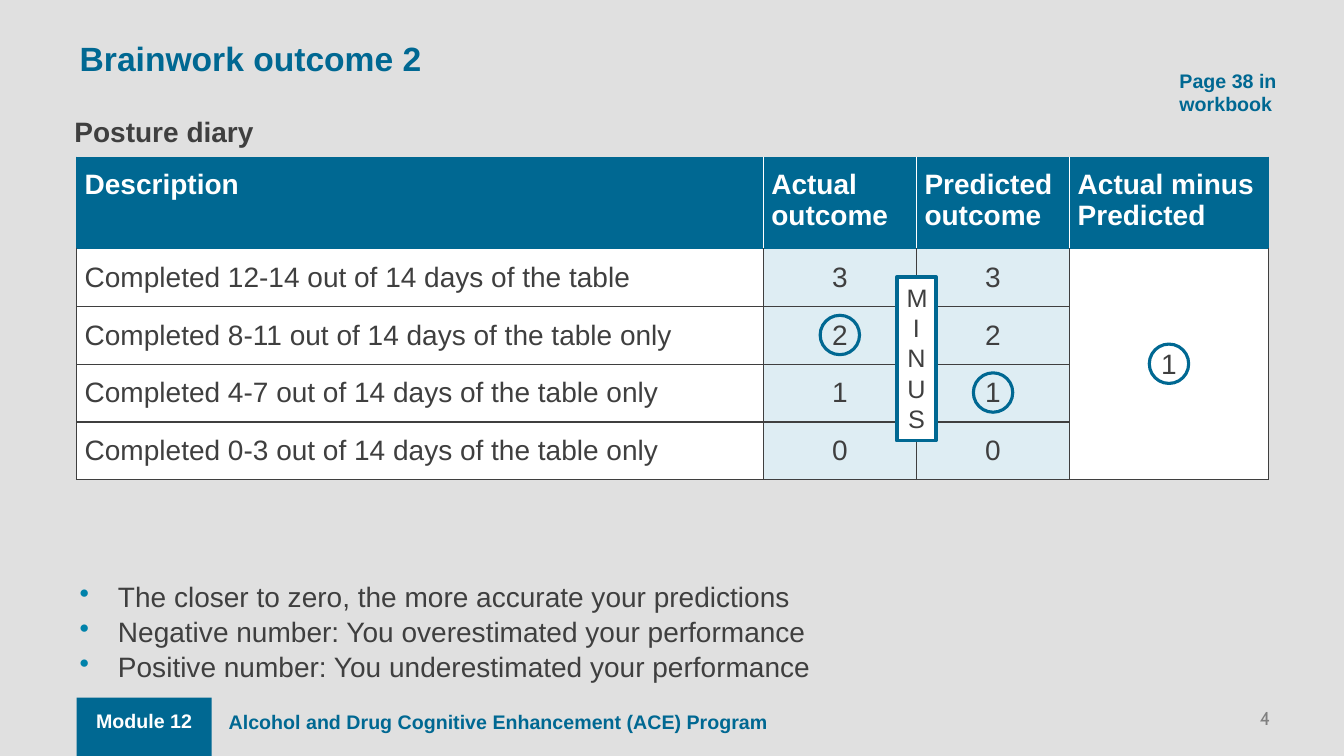
import pptx
import pptx.util
import pptx.dml.color
import pptx.enum.shapes
import pptx.enum.text
from lxml import etree
from pptx.oxml.ns import qn

RGB = pptx.dml.color.RGBColor
Pt = pptx.util.Pt
Inches = pptx.util.Inches
ALIGN = pptx.enum.text.PP_ALIGN
ANCHOR = pptx.enum.text.MSO_ANCHOR
KIND = pptx.enum.shapes.MSO_SHAPE

TEAL = RGB(0x00, 0x68, 0x92)
INK = RGB(0x3F, 0x3F, 0x3F)
WHITE = RGB(0xFF, 0xFF, 0xFF)
PALE = RGB(0xDE, 0xED, 0xF3)
BACK = RGB(0xE0, 0xE0, 0xE0)
GREY = RGB(0x80, 0x80, 0x80)
BULLET = RGB(0x00, 0x82, 0xAA)

WIDE, HIGH = Inches(13.33), Inches(7.5)

# Table grid, in percent of the slide's width and height
LEFT, TOP = 5.7, 20.8
COLS = [51.09, 11.4, 11.4, 14.78]
ROWS = [12.1] + [7.61] * 4
HEAD = ["Description", "Actual outcome", "Predicted outcome",
        "Actual minus Predicted"]
DAYS = ["12-14 out of 14 days of the table",
        "8-11 out of 14 days of the table only",
        "4-7 out of 14 days of the table only",
        "0-3 out of 14 days of the table only"]
HINTS = ["The closer to zero, the more accurate your predictions",
         "Negative number: You overestimated your performance",
         "Positive number: You underestimated your performance"]


def across(share):
    return round(WIDE * share / 100)


def down(share):
    return round(HIGH * share / 100)


def place(x, y, w, h):
    """Turn percent shares of the slide into lengths."""
    return across(x), down(y), across(w), down(h)


def col_x(col):
    """Left edge of a table column; fractions fall inside it."""
    whole = int(col)
    return across(LEFT + sum(COLS[:whole]) + (col - whole) * COLS[whole])


def row_y(row):
    """Top edge of a table row; fractions fall inside it."""
    whole = int(row)
    return down(TOP + sum(ROWS[:whole]) + (row - whole) * ROWS[whole])


def write(para, text, size, color, bold=False, align=None, font="Arial"):
    if align is not None:
        para.alignment = align
    run = para.add_run()
    run.text = text
    run.font.name, run.font.size, run.font.bold = font, Pt(size), bold
    run.font.color.rgb = color


def add_box(slide, spot, inset=True):
    frame = slide.shapes.add_textbox(*place(*spot)).text_frame
    frame.word_wrap = True
    if not inset:
        frame.margin_left = frame.margin_right = 0
        frame.margin_top = frame.margin_bottom = 0
    return frame


def add_shape(slide, kind, spot, fill=None, line=None):
    shape = slide.shapes.add_shape(kind, *spot)
    shape.shadow.inherit = False
    if fill is None:
        shape.fill.background()
    else:
        shape.fill.solid()
        shape.fill.fore_color.rgb = fill
    if line is None:
        shape.line.fill.background()
    else:
        shape.line.color.rgb, shape.line.width = TEAL, Pt(line)
    return shape


def add_ring(slide, col, row):
    """Circle the value at this point of the table grid."""
    size = across(2.93)
    spot = col_x(col) - size // 2, row_y(row) - size // 2, size, size
    add_shape(slide, KIND.OVAL, spot, line=2.25)


def add_bullet(para):
    props = para._p.get_or_add_pPr()
    props.set("marL", str(Inches(0.38)))
    props.set("indent", str(-Inches(0.38)))
    color = etree.SubElement(props, qn("a:buClr"))
    etree.SubElement(color, qn("a:srgbClr"), val=str(BULLET))
    etree.SubElement(props, qn("a:buChar"), char="•")


def set_edges(cell, left, right, top, bottom):
    props = cell._tc.get_or_add_tcPr()
    edges = zip(("lnL", "lnR", "lnT", "lnB"), (left, right, top, bottom))
    for spot, (name, color) in enumerate(edges):
        line = etree.Element(qn("a:" + name), w=str(Pt(1)))
        fill = etree.SubElement(line, qn("a:solidFill"))
        etree.SubElement(fill, qn("a:srgbClr"), val=str(color))
        props.insert(spot, line)


def fill_cell(cell, row, col, text):
    first, last = col == 0, col == len(COLS) - 1
    cell.margin_left = cell.margin_right = Inches(0.08)
    cell.margin_top = cell.margin_bottom = Inches(0.12)
    cell.fill.solid()
    para = cell.text_frame.paragraphs[0]
    if row == 0:
        cell.fill.fore_color.rgb = TEAL
        write(para, text, 20, WHITE, True)
        set_edges(cell, TEAL if first else WHITE,
                  TEAL if last else WHITE, TEAL, TEAL)
        return
    cell.fill.fore_color.rgb = WHITE if first or last else PALE
    cell.vertical_anchor = ANCHOR.MIDDLE
    if text:
        write(para, text, 20, INK, align=None if first else ALIGN.CENTER)
    set_edges(cell, INK, INK, TEAL if row == 1 else INK, INK)


def add_diary(slide):
    spot = place(LEFT, TOP, sum(COLS), sum(ROWS))
    table = slide.shapes.add_table(len(ROWS), len(COLS), *spot).table
    for col, share in enumerate(COLS):
        table.columns[col].width = across(share)
    for row, share in enumerate(ROWS):
        table.rows[row].height = down(share)
    lines = [HEAD]
    for rank, days in enumerate(DAYS):
        score = str(3 - rank)
        lines.append(["Completed " + days, score, score,
                      "1" if rank == 0 else ""])
    for row, line in enumerate(lines):
        for col, text in enumerate(line):
            fill_cell(table.cell(row, col), row, col, text)
    table.cell(1, 3).merge(table.cell(4, 3))


def add_minus(slide):
    """Upright label on the edge between the two outcome columns."""
    wide, high = across(2.93), down(21.6)
    spot = col_x(2) - wide // 2, down(36.67), wide, high
    frame = add_shape(slide, KIND.RECTANGLE, spot, WHITE, 2.75).text_frame
    frame.word_wrap = True
    frame.vertical_anchor = ANCHOR.TOP
    write(frame.paragraphs[0], "MINUS", 18, INK, align=ALIGN.CENTER)


def add_footer(slide):
    add_shape(slide, KIND.RECTANGLE, place(LEFT, 92.27, 10.05, 7.73), TEAL)
    name = add_box(slide, (16.28, 93.2, 83.57, 6.27))
    write(name.paragraphs[0],
          "Alcohol and Drug Cognitive Enhancement (ACE) Program",
          14, TEAL, True)
    part = add_box(slide, (LEFT, 93.07, 10.05, 4.53))
    write(part.paragraphs[0], "Module 12", 14, WHITE, True, ALIGN.CENTER)
    page = add_box(slide, (79.52, 93.47, 15, 2.67), False)
    write(page.paragraphs[0], "4", 13.3, GREY, align=ALIGN.RIGHT, font="Cabin")


def add_hints(slide):
    frame = add_box(slide, (5.93, 76.53, 88.6, 16.67), False)
    for rank, hint in enumerate(HINTS):
        para = frame.add_paragraph() if rank else frame.paragraphs[0]
        para.line_spacing = 1.04
        add_bullet(para)
        write(para, hint, 20, INK)


def main():
    deck = pptx.Presentation()
    deck.slide_width, deck.slide_height = WIDE, HIGH
    slide = deck.slides.add_slide(deck.slide_layouts[6])
    slide.background.fill.solid()
    slide.background.fill.fore_color.rgb = BACK
    add_footer(slide)
    add_diary(slide)
    title = add_box(slide, (5.93, 4.53, 66.92, 6.27), False)
    title.vertical_anchor = ANCHOR.MIDDLE
    write(title.paragraphs[0], "Brainwork outcome 2", 24, TEAL, True)
    for col, row in ((2.5, 3.5), (1.5, 2.5), (3.5, 3)):
        add_ring(slide, col, row)
    add_minus(slide)
    note = add_box(slide, (87.02, 8.4, 10.35, 7.6))
    write(note.paragraphs[0], "Page 38 in workbook", 14, TEAL, True)
    add_hints(slide)
    label = add_box(slide, (4.8, 14.53, 43.21, 5.87))
    write(label.paragraphs[0], "Posture diary", 20, INK, True)
    deck.save("out.pptx")


if __name__ == "__main__":
    main()
